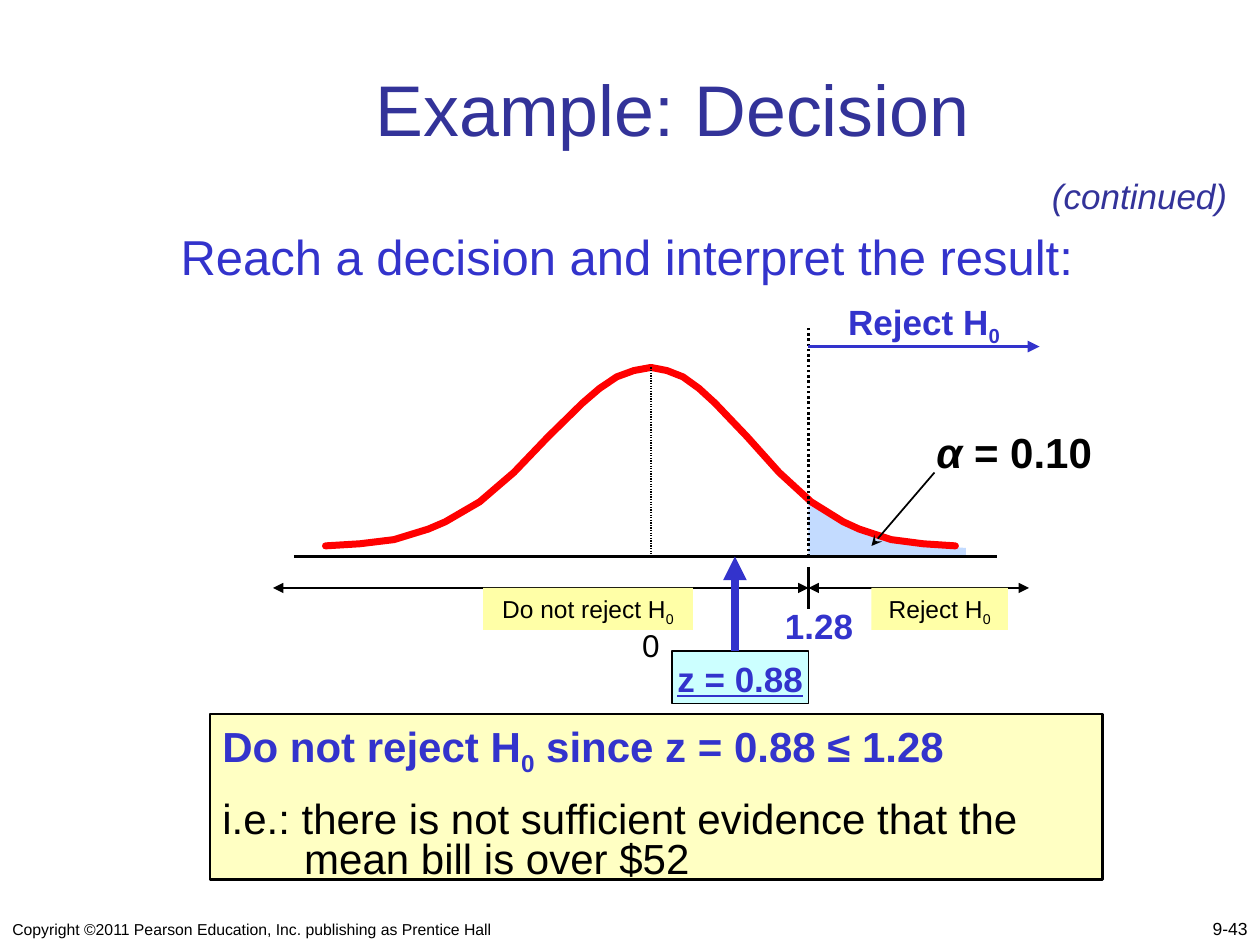
from lxml import etree
from pptx import Presentation, util as u
from pptx.dml.color import RGBColor
from pptx.enum import dml, shapes, text
from pptx.oxml.ns import qn

BLACK = RGBColor(0x00, 0x00, 0x00)
NAVY = RGBColor(0x33, 0x33, 0x99)
BLUE = RGBColor(0x33, 0x33, 0xCC)
RED = RGBColor(0xFF, 0x00, 0x00)
TAIL_BLUE = RGBColor(0xC3, 0xDB, 0xFF)
LABEL_YELLOW = RGBColor(0xFF, 0xFF, 0xA7)
RESULT_YELLOW = RGBColor(0xFF, 0xFF, 0xC3)
CYAN = RGBColor(0xCC, 0xFF, 0xFF)

LEFT, CENTER, RIGHT = text.PP_ALIGN.LEFT, text.PP_ALIGN.CENTER, text.PP_ALIGN.RIGHT
TOP, BOTTOM = text.MSO_ANCHOR.TOP, text.MSO_ANCHOR.BOTTOM
DOTS = dml.MSO_LINE.ROUND_DOT

CURVE_STEPS = (0, 1, 2, 3, 4, 5, 6, 8, 10, 12, 13, 14, 15, 16, 17, 19)
CURVE_ROWS = (35, 35.3, 35.9, 37, 38.4, 40, 41.6, 45, 47.8, 49.7, 50.4, 50.9, 51.4, 51.6, 51.8, 52)
TAIL_AREA = ((92, 53), (92, 52.2), (87.2, 51.8), (84, 51.1), (81, 50), (77, 47.5), (77, 53))


class SlideBuilder:
    """Draws styled elements on a slide with a grid of 120 columns by 90 rows."""

    font = "Arial"
    cell = u.Inches(10) // 120

    def __init__(self, presentation):
        self.slide = presentation.slides.add_slide(presentation.slide_layouts[1])

    def grid(self, *cells):
        return [u.Emu(round(value * self.cell)) for value in cells]

    def add_runs(self, paragraph, runs, size, color, align=LEFT):
        paragraph.alignment = align
        for words, marks in runs:
            run = paragraph.add_run()
            run.text = words
            font = run.font
            font.name, font.size = self.font, u.Pt(size)
            font.color.rgb = color
            font.bold, font.italic = "b" in marks, "i" in marks
            font.underline = "u" in marks
            if "s" in marks:
                font._element.set("baseline", "-25000")

    def fill_frame(self, shape, runs, size, color, align=LEFT, anchor=TOP, wrap=True):
        frame = shape.text_frame
        frame.auto_size = text.MSO_AUTO_SIZE.NONE
        frame.word_wrap, frame.vertical_anchor = wrap, anchor
        self.add_runs(frame.paragraphs[0], runs, size, color, align)
        return frame

    def placeholder(self, index, box, runs, size, color, align=LEFT, anchor=TOP):
        shape = self.slide.placeholders[index]
        shape.left, shape.top, shape.width, shape.height = self.grid(*box)
        paragraph = shape.text_frame.paragraphs[0]
        if index:
            properties = paragraph._p.get_or_add_pPr()
            properties.set("marL", "0")
            properties.set("indent", "0")
            etree.SubElement(properties, qn("a:buNone"))
        paragraph.space_before = u.Pt(0)
        self.fill_frame(shape, runs, size, color, align, anchor)

    def label(self, box, runs, size, color, **options):
        shape = self.slide.shapes.add_textbox(*self.grid(*box))
        self.fill_frame(shape, runs, size, color, **options)

    def paint(self, shape, fill=None, line=None, width=1.0):
        shape.shadow.inherit = False
        if fill is None:
            shape.fill.background()
        else:
            shape.fill.solid()
            shape.fill.fore_color.rgb = fill
        if line is None:
            shape.line.fill.background()
        else:
            shape.line.color.rgb = line
            shape.line.width = u.Pt(width)
        return shape

    def box(self, box, fill, line=None, width=1.0):
        shape = self.slide.shapes.add_shape(shapes.MSO_SHAPE.RECTANGLE, *self.grid(*box))
        return self.paint(shape, fill, line, width)

    def outline(self, points, close, **style):
        corners = [tuple(self.grid(*point)) for point in points]
        builder = self.slide.shapes.build_freeform(*corners[0])
        builder.add_line_segments(corners[1:], close=close)
        return self.paint(builder.convert_to_shape(), **style)

    def half_curve(self, center, reach):
        points = [(center + reach * step / CURVE_STEPS[-1], row)
                  for step, row in zip(CURVE_STEPS, CURVE_ROWS)]
        curve = self.outline(points, False, line=RED, width=4)
        curve.line._get_or_add_ln().set("cap", "rnd")

    def line(self, start, end, color=BLACK, width=1.5, head=None, tail=None, dash=None):
        connector = self.slide.shapes.add_connector(
            shapes.MSO_CONNECTOR.STRAIGHT, *self.grid(*start, *end))
        connector.line.color.rgb = color
        connector.line.width = u.Pt(width)
        if dash:
            connector.line.dash_style = dash
        outline = connector.line._get_or_add_ln()
        for end_tag, arrow in (("a:headEnd", head), ("a:tailEnd", tail)):
            if arrow:
                etree.SubElement(outline, qn(end_tag), type=arrow)
        etree.SubElement(connector._element.spPr, qn("a:effectLst"))


def draw_distribution(builder):
    builder.outline(TAIL_AREA, True, fill=TAIL_BLUE)
    builder.half_curve(62, -31)
    builder.half_curve(62, 29)
    builder.line((28, 53), (95, 53), width=2)
    builder.line((62, 35), (62, 53), width=0.75, dash=DOTS)
    builder.line((77, 53), (77, 31), dash=DOTS)
    builder.line((77, 54), (77, 58))
    for start, end in ((77, 98), (26, 77)):
        builder.line((start, 56), (end, 56), head="triangle", tail="triangle")
    builder.line((77, 33), (99, 33), BLUE, 2.25, tail="triangle")
    builder.line((89, 45), (83, 52), width=1, tail="stealth")


def draw_labels(builder):
    for left, width, words in ((83, 13, "Reject H"), (46, 20, "Do not reject H")):
        label = builder.box((left, 56, width, 4), LABEL_YELLOW)
        builder.fill_frame(label, [(words, ""), ("0", "s")], 14, BLACK, CENTER)
    builder.label((88, 40, 18, 6), [("α ", "bi"), ("= 0.10", "b")], 24, BLACK)
    builder.label((71, 57, 14, 5), [("1.28", "b")], 20, BLUE, align=CENTER)
    builder.label((59, 59, 6, 5), [("0", "")], 18, BLACK, align=CENTER)
    builder.label((78, 28, 20, 5), [("Reject H", "b"), ("0", "bs")], 20, BLUE, align=CENTER)
    builder.box((64, 62, 13, 5), CYAN, BLACK, 0.75)
    builder.line((70, 62), (70, 53), BLUE, 4.5, tail="triangle")
    builder.label((63, 62, 15, 5), [("z = 0.88", "bu")], 20, BLUE, align=CENTER)


def draw_conclusion(builder):
    result = builder.box((20, 68, 85, 15.8), RESULT_YELLOW, BLACK, 1.5)
    frame = builder.fill_frame(
        result, [("Do not reject H", "b"), ("0", "bs"), (" since z = 0.88 ≤ 1.28", "b")], 24, BLUE)
    for words, spacing, indent in (
            ("i.e.: there is not sufficient evidence that the", 0.8, 0),
            ("mean bill is over $52", 0.2, 0.65)):
        paragraph = frame.add_paragraph()
        paragraph.line_spacing, paragraph.space_before = spacing, u.Pt(14)
        paragraph._p.get_or_add_pPr().set("marL", str(u.Inches(indent)))
        builder.add_runs(paragraph, [(words, "")], 24, BLACK)


def main():
    presentation = Presentation()
    presentation.slide_width, presentation.slide_height = u.Inches(10), u.Inches(7.5)
    builder = SlideBuilder(presentation)
    builder.placeholder(0, (13, 5, 102.2, 10), [("Example: Decision", "")], 41, NAVY, CENTER, BOTTOM)
    builder.placeholder(1, (16, 21, 96, 8), [("Reach a decision and interpret the result:", "")], 28, BLUE)
    builder.label((99, 16, 19.3, 5), [("(continued)", "i")], 20, NAVY, wrap=False)
    draw_distribution(builder)
    draw_labels(builder)
    draw_conclusion(builder)
    builder.label((0, 86, 61, 4), [
        ("Copyright ©2011 Pearson Education, Inc. publishing as Prentice Hall", "")],
        9, BLACK, anchor=BOTTOM)
    builder.label((95, 86, 25, 4), [("9-43", "")], 10, BLACK, align=RIGHT, anchor=BOTTOM)
    presentation.save("out.pptx")


if __name__ == "__main__":
    main()
